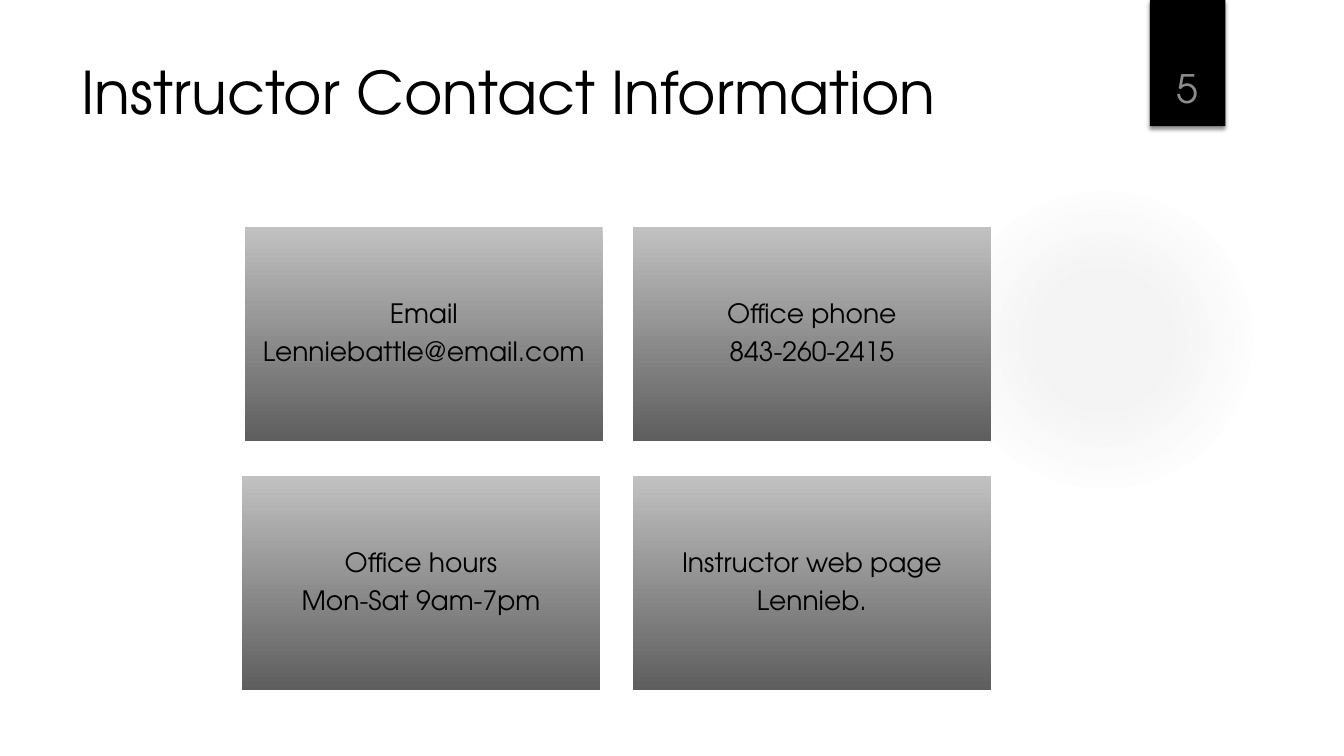
import lxml.etree
import pptx
import pptx.dml.color
import pptx.enum.shapes
import pptx.enum.text
import pptx.oxml
import pptx.oxml.ns
import pptx.util

Cm = pptx.util.Cm
Pt = pptx.util.Pt
MSO_SHAPE = pptx.enum.shapes.MSO_SHAPE
ANCHOR = pptx.enum.text.MSO_ANCHOR
ALIGN = pptx.enum.text.PP_ALIGN
FONT = "TeX Gyre Adventor"
NS = pptx.oxml.ns.nsdecls("a")


def rgb(color):
    return pptx.dml.color.RGBColor.from_string(color)


def style(paragraph, size, color, align):
    paragraph.alignment = align
    paragraph.font.name = FONT
    paragraph.font.size = Pt(size)
    paragraph.font.color.rgb = rgb(color)


deck = pptx.Presentation()
deck.slide_width, deck.slide_height = Cm(33.87), Cm(19.05)
slide = deck.slides.add_slide(deck.slide_layouts[5])
shapes = slide.shapes

# Soft round glow at the right
glow = shapes.add_shape(MSO_SHAPE.OVAL, Cm(23.9), Cm(4.65), Cm(7.82), Cm(7.82))
glow.shadow.inherit = False
glow.line.fill.background()
glow.fill.solid()
stops = "".join(
    f'<a:gs pos="{position * 1000}"><a:srgbClr val="666666">'
    f'<a:alpha val="{opacity * 1000}"/></a:srgbClr></a:gs>'
    for position, opacity in [(0, 7), (36, 6), (69, 0), (100, 0)]
)
radial = pptx.oxml.parse_xml(
    f'<a:gradFill {NS} rotWithShape="1"><a:gsLst>{stops}</a:gsLst><a:path path="circle">'
    '<a:fillToRect l="50000" t="50000" r="50000" b="50000"/></a:path></a:gradFill>'
)
glow_properties = glow.element.spPr
glow_properties.replace(glow_properties.find(pptx.oxml.ns.qn("a:solidFill")), radial)

# Black ribbon with the page number
ribbon = shapes.add_shape(MSO_SHAPE.RECTANGLE, Cm(28.98), Cm(0), Cm(1.9), Cm(3.18))
ribbon.shadow.inherit = False
ribbon.line.fill.background()
ribbon.fill.solid()
ribbon.fill.fore_color.rgb = rgb("000000")
ribbon.element.spPr.find(pptx.oxml.ns.qn("a:effectLst")).append(pptx.oxml.parse_xml(
    f'<a:outerShdw {NS} blurRad="{Pt(3)}" dist="{Pt(2)}" dir="5400000" rotWithShape="0">'
    '<a:srgbClr val="000000"><a:alpha val="45000"/></a:srgbClr></a:outerShdw>'
))

page_number = shapes.add_textbox(Cm(28.75), Cm(0.81), Cm(2.34), Cm(2.13)).text_frame
page_number.word_wrap = True
page_number.vertical_anchor = ANCHOR.BOTTOM
page_number.text = "5"
style(page_number.paragraphs[0], 28, "8C8C8C", ALIGN.CENTER)

title = shapes.title
title.left, title.top, title.width, title.height = Cm(1.8), Cm(1.27), Cm(26.14), Cm(3.89)
title.text_frame.text = "Instructor Contact Information"
title.text_frame.vertical_anchor = ANCHOR.TOP
style(title.text_frame.paragraphs[0], 42, "000000", ALIGN.LEFT)

# Contact cards: left, top, heading, detail
contacts = [
    (6.17, 5.72, "Email", "Lenniebattle@email.com"),
    (15.95, 5.72, "Office phone", "843-260-2415"),
    (6.1, 11.99, "Office hours", "Mon-Sat 9am-7pm"),
    (15.95, 11.99, "Instructor web page", "Lennieb."),
]
for left, top, heading, detail in contacts:
    card = shapes.add_shape(MSO_SHAPE.RECTANGLE, Cm(left), Cm(top), Cm(9.02), Cm(5.4))
    card.shadow.inherit = False
    card.line.fill.background()
    card.fill.gradient()
    card.fill.gradient_angle = 270
    for stop, position, color in zip(card.fill.gradient_stops, (0, 1), ("C1C1C1", "5E5E5E")):
        stop.position = position
        stop.color.rgb = rgb(color)
    frame = card.text_frame
    frame.word_wrap = True
    frame.vertical_anchor = ANCHOR.MIDDLE
    frame.margin_left = frame.margin_right = frame.margin_top = frame.margin_bottom = Cm(0.2)
    frame.text = f"{heading}\n{detail}"
    for paragraph in frame.paragraphs:
        style(paragraph, 19, "000000", ALIGN.CENTER)
        paragraph.line_spacing = 0.9
        paragraph.space_after = Pt(6.65)

deck.save("out.pptx")
